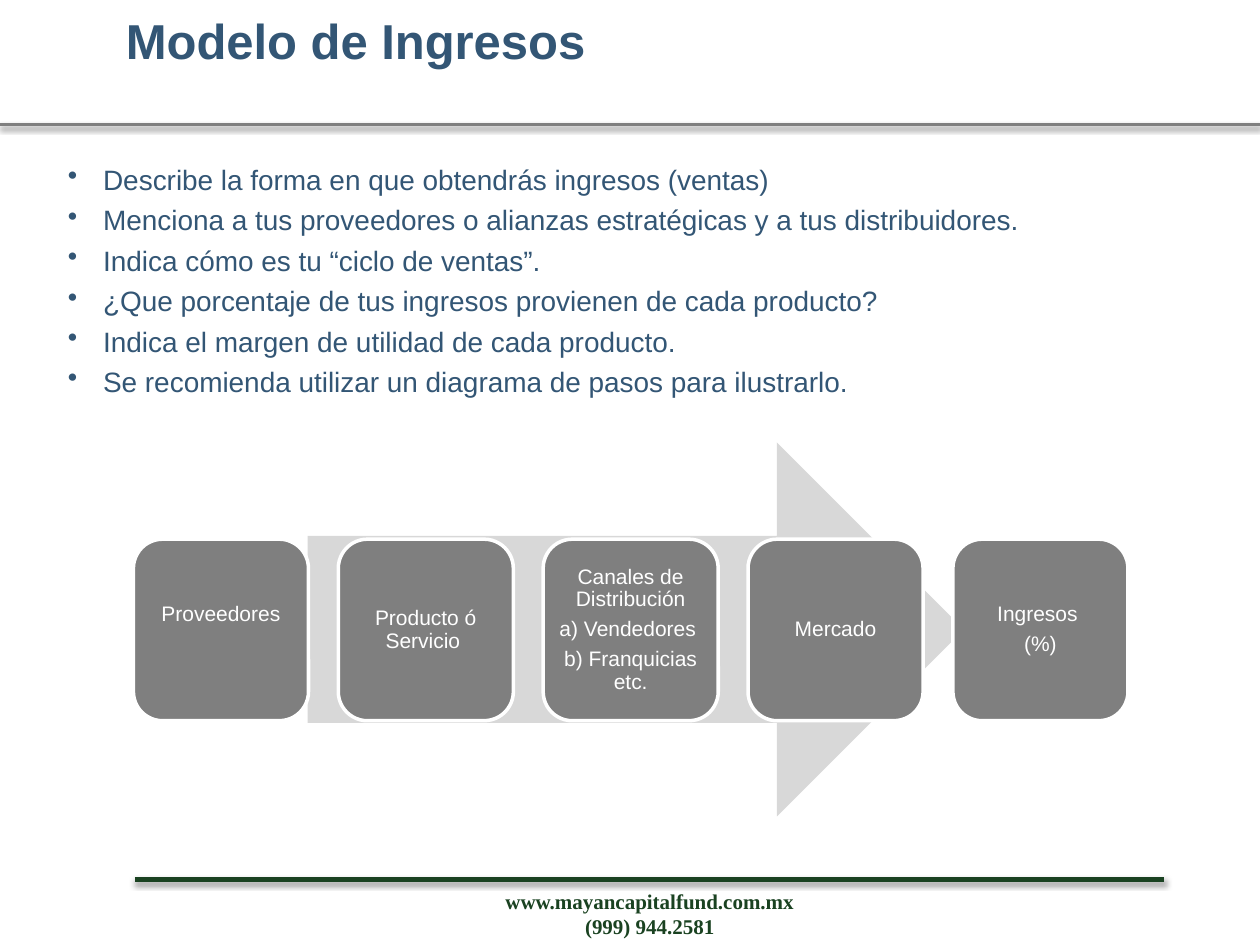
from lxml.etree import SubElement
from pptx import Presentation
from pptx.dml.color import RGBColor
from pptx.enum.shapes import MSO_CONNECTOR as Connector, MSO_SHAPE as Shape
from pptx.enum.text import MSO_ANCHOR as Anchor, MSO_AUTO_SIZE as AutoSize, PP_ALIGN as Align
from pptx.oxml import parse_xml
from pptx.oxml.ns import nsdecls, qn
from pptx.util import Cm, Pt

BLUE, GREEN, GREY, PALE, WHITE = "335675", "1A4221", "7F7F7F", "D8D8D8", "FFFFFF"


def colour(value):
    return RGBColor.from_string(value)


def apply(target, values):
    for name, value in values.items():
        setattr(target, name, value)


class SlideMaker:
    """Holds the style and the slide being filled."""

    font = "Arial"
    indent = Cm(0.71)

    def __init__(self, page):
        self.page = page

    def fill_text(self, frame, lines, size, ink, bold=False, font=None,
                  bullet=None, before=0, **layout):
        for number, line in enumerate(lines):
            para = frame.paragraphs[0] if number == 0 else frame.add_paragraph()
            if bullet:
                props = para._p.get_or_add_pPr()
                props.set("marL", str(self.indent))
                props.set("indent", str(-self.indent))
                SubElement(props, qn("a:buChar")).set("char", bullet)
            apply(para, layout)
            if number and before:
                para.space_before = Pt(before)
            span = para.add_run()
            span.text = line
            apply(span.font, {"name": font or self.font, "size": Pt(size), "bold": bold})
            span.font.color.rgb = colour(ink)

    def text(self, area, lines, size, ink, frame_format=None, **style):
        box = self.page.shapes.add_textbox(*map(Cm, area))
        apply(box.text_frame, {"word_wrap": True, **(frame_format or {})})
        self.fill_text(box.text_frame, lines, size, ink, **style)

    def shape(self, kind, area, fill, line=None):
        item = self.page.shapes.add_shape(kind, *map(Cm, area))
        item.shadow.inherit = False
        item.fill.solid()
        item.fill.fore_color.rgb = colour(fill)
        if line:
            item.line.color.rgb = colour(line)
            item.line.width = Pt(2)
        else:
            item.line.fill.background()
        return item

    def step(self, area, lines, lift):
        frame = self.shape(Shape.ROUNDED_RECTANGLE, area, GREY, WHITE).text_frame
        inset = 0.13
        apply(frame, {
            "word_wrap": True, "vertical_anchor": Anchor.MIDDLE,
            "margin_left": Cm(inset), "margin_right": Cm(inset),
            "margin_top": Cm(inset), "margin_bottom": Cm(inset + lift),
        })
        self.fill_text(frame, lines, 12, WHITE, alignment=Align.CENTER,
                       line_spacing=0.9, space_after=Pt(4.2))

    def rule(self, left, right, y, ink, width, opacity, distance):
        line = self.page.shapes.add_connector(
            Connector.STRAIGHT, Cm(left), Cm(y), Cm(right), Cm(y))
        line.line.color.rgb = colour(ink)
        line.line.width = Pt(width)
        line._element.spPr.append(parse_xml(
            f'<a:effectLst {nsdecls("a")}>'
            f'<a:outerShdw blurRad="{Pt(3.1)}" dist="{Pt(distance)}" dir="5400000" '
            f'rotWithShape="0"><a:srgbClr val="000000">'
            f'<a:alpha val="{opacity * 1000}"/></a:srgbClr></a:outerShdw></a:effectLst>'))


def main():
    deck = Presentation()
    apply(deck, {"slide_width": Cm(25.4), "slide_height": Cm(19.05)})
    maker = SlideMaker(deck.slides.add_slide(deck.slide_layouts[6]))

    # Header and footer
    maker.rule(0, 25.4, 2.51, GREY, 2, 38, 1.6)
    maker.rule(2.72, 23.47, 17.73, GREEN, 3, 35, 1.8)
    maker.text((9.91, 17.78, 6.38, 1.27),
               ["www.mayancapitalfund.com.mx", "(999) 944.2581"], 12, GREEN,
               {"word_wrap": False, "auto_size": AutoSize.SHAPE_TO_FIT_TEXT},
               bold=True, font="Times New Roman", alignment=Align.CENTER)

    # Title and bullets
    maker.text((2.29, 0, 17.63, 1.8), ["Modelo de Ingresos"], 28, BLUE,
               {"margin_top": Cm(0.22)}, bold=True)
    maker.text((1.12, 3.15, 22.86, 14.68), [
        "Describe la forma en que obtendrás ingresos (ventas)",
        "Menciona a tus proveedores o alianzas estratégicas y a tus distribuidores.",
        "Indica cómo es tu “ciclo de ventas”.",
        "¿Que porcentaje de tus ingresos provienen de cada producto?",
        "Indica el margen de utilidad de cada producto.",
        "Se recomienda utilizar un diagrama de pasos para ilustrarlo.",
    ], 16, BLUE, bullet="•", before=3.9)

    # Step diagram: lines of text and how far the bottom inset grows
    maker.shape(Shape.RIGHT_ARROW, (6.2, 8.92, 13.23, 7.54), PALE)
    steps = [
        (["Proveedores"], 0.6),
        (["Producto ó Servicio "], 0),
        (["Canales de Distribución", "a) Vendedores ", "b) Franquicias etc."], 0),
        (["Mercado"], 0),
        (["Ingresos ", "(%)"], 0),
    ]
    for column, (lines, lift) in enumerate(steps):
        maker.step((2.69 + 4.13 * column, 10.87, 3.53, 3.66), lines, lift)

    deck.save("out.pptx")


if __name__ == "__main__":
    main()
